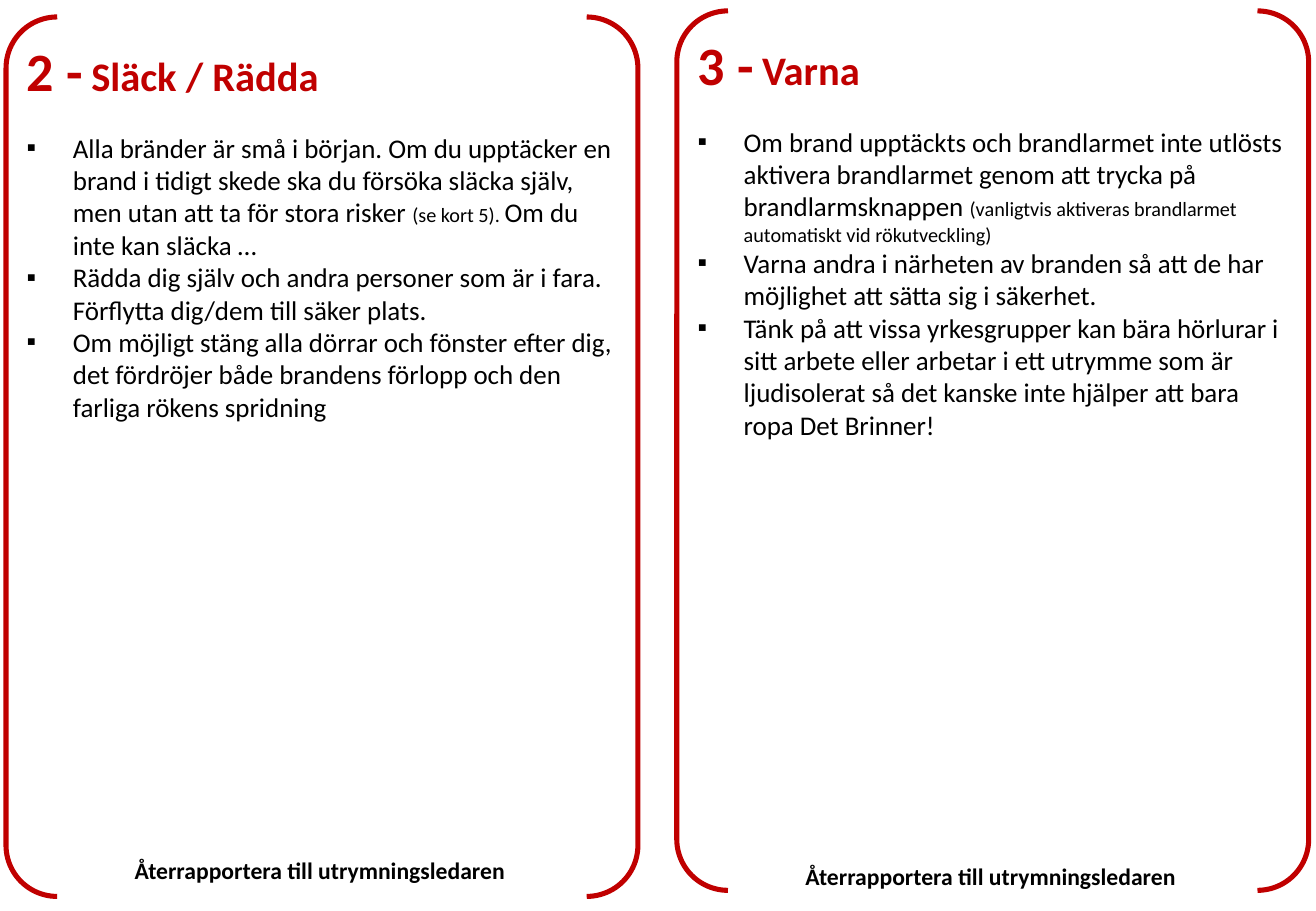
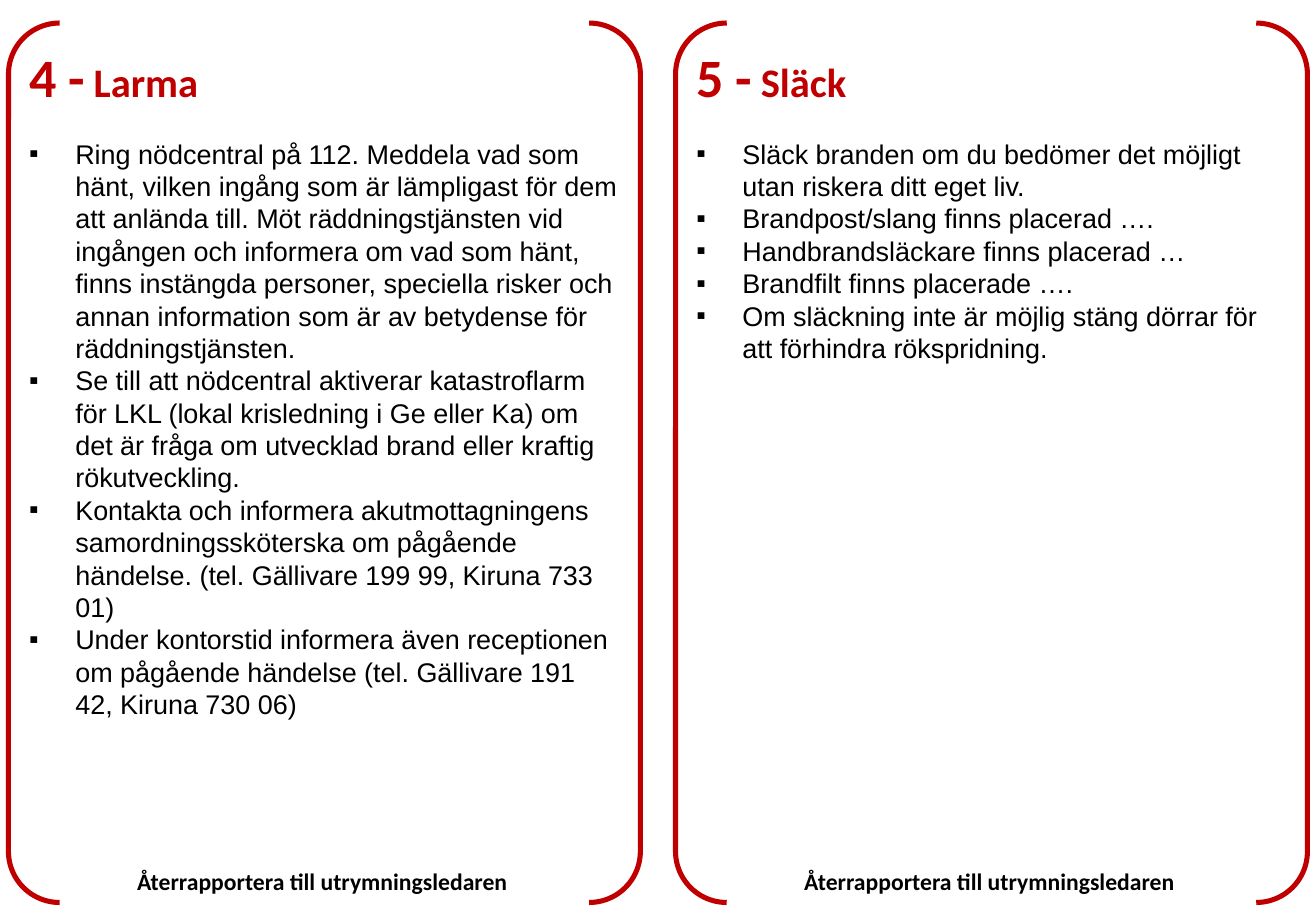
from lxml import etree
from pptx import Presentation
from pptx.dml.color import RGBColor
from pptx.enum.shapes import MSO_SHAPE
from pptx.enum.text import MSO_ANCHOR, MSO_AUTO_SIZE, PP_ALIGN
from pptx.oxml.ns import qn
from pptx.util import Inches, Pt

RED = RGBColor(0xC0, 0x00, 0x00)
BLACK = RGBColor(0x00, 0x00, 0x00)
BRACKET_PAIR = MSO_SHAPE.DOUBLE_BRACKET
LEFT, TOP = PP_ALIGN.LEFT, MSO_ANCHOR.TOP
FIXED_SIZE = MSO_AUTO_SIZE.NONE

COMPARISON_LAYOUT = 4
UNUSED_HEADING = 1
# (heading, list) placeholder numbers for the left and right card
CARD_SLOTS = ((0, 2), (3, 4))

CARD_WIDTH, CARD_HEIGHT = 5.2, 7.24
PADDING = 0.17
TEXT_WIDTH = CARD_WIDTH - 2 * PADDING
HEADING_HEIGHT, LIST_OFFSET, LIST_HEIGHT = 0.55, 0.94, 5.8
FOOTER_INDENT, FOOTER_WIDTH, FOOTER_HEIGHT = 0.96, 3.28, 0.34
BULLET_INDENT = 0.38
FOOTER = "Återrapportera till utrymningsledaren"


class CardDeck:
    def __init__(self):
        self.deck = Presentation()
        self.deck.slide_width = Inches(10.83)
        self.deck.slide_height = Inches(7.5)
        self.page = None

    def add_page(self):
        layout = self.deck.slide_layouts[COMPARISON_LAYOUT]
        self.page = self.deck.slides.add_slide(layout)
        unused = self.page.placeholders[UNUSED_HEADING].element
        unused.getparent().remove(unused)

    def span(self, para, text, size, color=BLACK, bold=False, font="Calibri"):
        span = para.add_run()
        span.text = text
        span.font.name = font
        span.font.size = Pt(size)
        span.font.bold = bold
        span.font.color.rgb = color

    def place(self, slot, left, top, height):
        """Move a placeholder, clear its margins and return its text frame."""
        box = next(item for item in self.page.placeholders
                   if item.placeholder_format.idx == slot)
        box.left, box.top = Inches(left), Inches(top)
        box.width, box.height = Inches(TEXT_WIDTH), Inches(height)
        frame = box.text_frame
        frame.margin_left = frame.margin_right = 0
        frame.margin_top = frame.margin_bottom = 0
        frame.word_wrap = True
        frame.auto_size = FIXED_SIZE
        frame.vertical_anchor = TOP
        return frame

    def plain(self, para):
        para.alignment = LEFT
        para.line_spacing = 1.0
        para.space_before = para.space_after = Pt(0)

    def brackets(self, left, top):
        shape = self.page.shapes.add_shape(
            BRACKET_PAIR, Inches(left), Inches(top),
            Inches(CARD_WIDTH), Inches(CARD_HEIGHT))
        shape.adjustments[0] = 0.081
        shape.shadow.inherit = False
        shape.fill.background()
        shape.line.color.rgb = RED
        shape.line.width = Pt(3)

    def heading(self, slot, left, top, number, title):
        para = self.place(slot, left, top, HEADING_HEIGHT).paragraphs[0]
        self.plain(para)
        self.span(para, f"{number} -", 32, RED, True)
        self.span(para, " ", 22, BLACK, True)
        self.span(para, title, 24, RED, True)

    def bullet(self, para):
        self.plain(para)
        properties = para._p.get_or_add_pPr()
        properties.set("marL", str(Inches(BULLET_INDENT)))
        properties.set("indent", str(-Inches(BULLET_INDENT)))
        etree.SubElement(properties, qn("a:buFont")).set("typeface", "Arial")
        etree.SubElement(properties, qn("a:buChar")).set("char", "▪")

    def bullets(self, slot, left, top, items, font):
        """Fill a list; an item is a text or a tuple of (text, size) spans."""
        frame = self.place(slot, left, top, LIST_HEIGHT)
        for index, item in enumerate(items):
            para = frame.add_paragraph() if index else frame.paragraphs[0]
            self.bullet(para)
            spans = ((item, 16),) if isinstance(item, str) else item
            for text, size in spans:
                self.span(para, text, size, font=font)

    def footer(self, left, top):
        box = self.page.shapes.add_textbox(
            Inches(left), Inches(top), Inches(FOOTER_WIDTH), Inches(FOOTER_HEIGHT))
        box.text_frame.word_wrap = False
        self.span(box.text_frame.paragraphs[0], FOOTER, 14, bold=True)

    def card(self, slots, left, top, footer_top, number, title, items, font):
        heading_slot, list_slot = slots
        text_left = left + PADDING
        self.brackets(left, top)
        self.heading(heading_slot, text_left, top + PADDING, number, title)
        self.bullets(list_slot, text_left, top + LIST_OFFSET, items, font)
        self.footer(left + FOOTER_INDENT, footer_top)


# Each page: list font, then cards of (left, top, footer top, number, title, items)
PAGES = (
    ("Calibri", (
        (0.05, 0.14, 7.0, 2, "Släck / Rädda", (
            (("Alla bränder är små i början. Om du upptäcker en brand i tidigt "
              "skede ska du försöka släcka själv, men utan att ta för stora "
              "risker ", 16),
             ("(se kort 5). ", 12),
             ("Om du inte kan släcka …", 16)),
            "Rädda dig själv och andra personer som är i fara. Förflytta "
            "dig/dem till säker plats.",
            "Om möjligt stäng alla dörrar och fönster efter dig, det fördröjer "
            "både brandens förlopp och den farliga rökens spridning",
        )),
        (5.57, 0.09, 7.05, 3, "Varna", (
            (("Om brand upptäckts och brandlarmet inte utlösts aktivera "
              "brandlarmet genom att trycka på brandlarmsknappen ", 16),
             ("(vanligtvis aktiveras brandlarmet automatiskt vid "
              "rökutveckling)", 12)),
            "Varna andra i närheten av branden så att de har möjlighet att "
            "sätta sig i säkerhet.",
            "Tänk på att vissa yrkesgrupper kan bära hörlurar i sitt arbete "
            "eller arbetar i ett utrymme som är ljudisolerat så det kanske "
            "inte hjälper att bara ropa Det Brinner!",
        )),
    )),
    ("Arial", (
        (0.07, 0.19, 7.09, 4, "Larma", (
            "Ring nödcentral på 112. Meddela vad som hänt, vilken ingång som är "
            "lämpligast för dem att anlända till. Möt räddningstjänsten vid "
            "ingången och informera om vad som hänt, finns instängda personer, "
            "speciella risker och annan information som är av betydense för "
            "räddningstjänsten.",
            "Se till att nödcentral aktiverar katastroflarm för LKL (lokal "
            "krisledning i Ge eller Ka) om det är fråga om utvecklad brand "
            "eller kraftig rökutveckling.",
            "Kontakta och informera akutmottagningens samordningssköterska om "
            "pågående händelse. (tel. Gällivare 199 99, Kiruna 733 01)",
            "Under kontorstid informera även receptionen om pågående händelse "
            "(tel. Gällivare 191 42, Kiruna 730 06)",
        )),
        (5.56, 0.19, 7.09, 5, "Släck", (
            "Släck branden om du bedömer det möjligt utan riskera ditt eget liv.",
            "Brandpost/slang finns placerad ….",
            "Handbrandsläckare finns placerad …",
            "Brandfilt finns placerade ….",
            "Om släckning inte är möjlig stäng dörrar för att förhindra "
            "rökspridning.",
        )),
    )),
)


def main():
    cards = CardDeck()
    for font, page_cards in PAGES:
        cards.add_page()
        for slots, card in zip(CARD_SLOTS, page_cards):
            cards.card(slots, *card, font)
    cards.deck.save("out.pptx")


if __name__ == "__main__":
    main()
